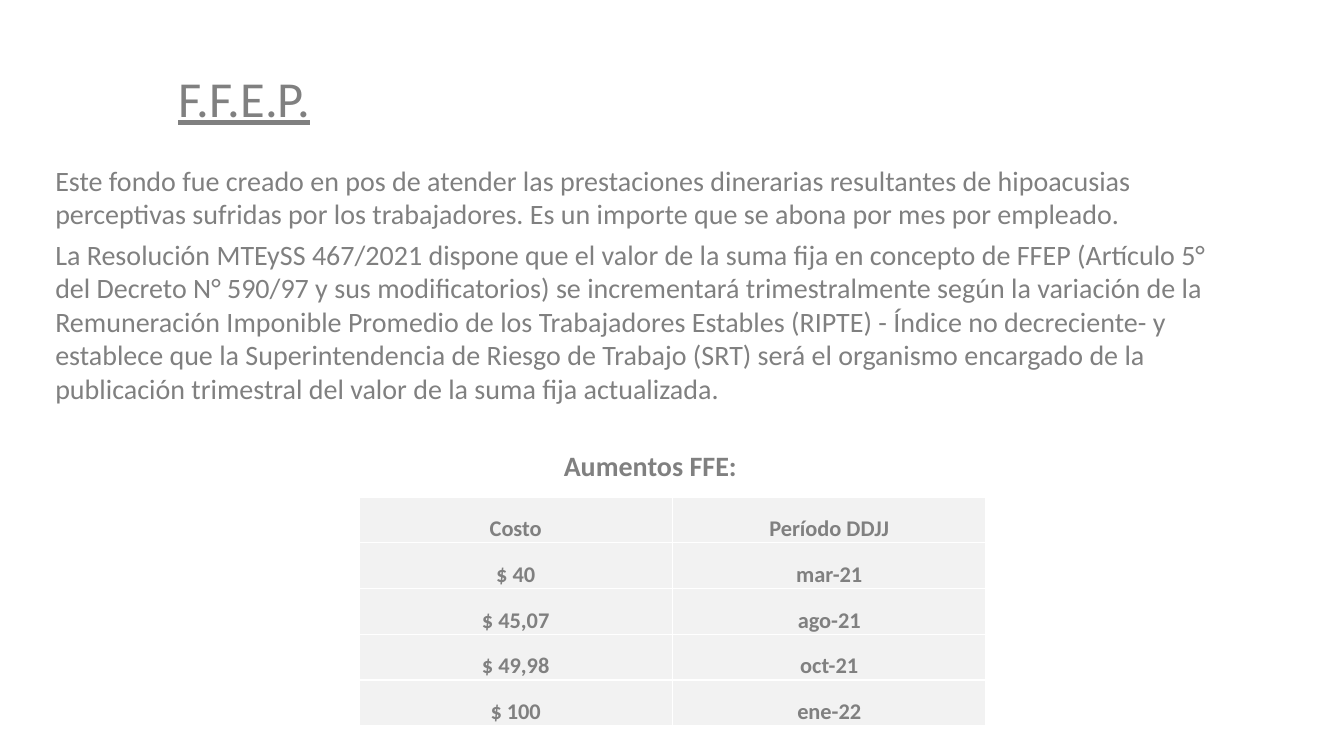
from lxml.etree import SubElement
from pptx import Presentation
from pptx.dml.color import RGBColor
from pptx.enum.text import MSO_ANCHOR as Anchor, PP_ALIGN as Align
from pptx.oxml.ns import qn
from pptx.util import Inches, Pt

TITLE = "F.F.E.P."
FUND_TEXT = [
    "Este fondo fue creado en pos de atender las prestaciones dinerarias resultantes de "
    "hipoacusias perceptivas sufridas por los trabajadores. Es un importe que se abona por "
    "mes por empleado.",
    "La Resolución MTEySS 467/2021 dispone que el valor de la suma fija en concepto de FFEP "
    "(Artículo 5° del Decreto N° 590/97 y sus modificatorios) se incrementará trimestralmente "
    "según la variación de la Remuneración Imponible Promedio de los Trabajadores Estables "
    "(RIPTE) - Índice no decreciente- y establece que la Superintendencia de Riesgo de Trabajo "
    "(SRT) será el organismo encargado de la publicación trimestral del valor de la suma fija "
    "actualizada.",
]
INCREASES_HEADING = "Aumentos FFE:"
INCREASES = [
    ("Costo", "Período DDJJ"),
    ("$ 40", "mar-21"),
    ("$ 45,07", "ago-21"),
    ("$ 49,98", "oct-21"),
    ("$ 100", "ene-22"),
]
GRAY, CELL_FILL, CELL_BORDER = "808080", "F2F2F2", "FFFFFF"


def color(hex_code):
    return RGBColor.from_string(hex_code)


def write(frame, texts, size=20, bold=False, underline=False, align=Align.LEFT, gap=0):
    for index, text in enumerate(texts):
        paragraph = frame.add_paragraph() if index else frame.paragraphs[0]
        paragraph.alignment = align
        if index:
            paragraph.space_before = Pt(gap)
        run = paragraph.add_run()
        run.text = text
        font = run.font
        font.name, font.size, font.bold, font.underline = "Calibri", Pt(size), bold, underline
        font.color.rgb = color(GRAY)


def text_area(slide, left, top, width, height, anchor=Anchor.TOP):
    box = slide.shapes.add_textbox(Inches(left), Inches(top), Inches(width), Inches(height))
    frame = box.text_frame
    frame.word_wrap = True
    frame.vertical_anchor = anchor
    return frame


def style_cell(cell):
    cell.vertical_anchor = Anchor.BOTTOM
    cell.margin_left = cell.margin_right = cell.margin_top = Inches(0.01)
    cell.margin_bottom = 0
    properties = cell._tc.get_or_add_tcPr()
    for side in ("a:lnL", "a:lnR", "a:lnT", "a:lnB"):
        line = SubElement(properties, qn(side), w=str(Pt(1)))
        SubElement(SubElement(line, qn("a:solidFill")), qn("a:srgbClr"), val=CELL_BORDER)
    cell.fill.solid()
    cell.fill.fore_color.rgb = color(CELL_FILL)


def main():
    deck = Presentation()
    deck.slide_width, deck.slide_height = Inches(13.33), Inches(7.5)
    slide = deck.slides.add_slide(deck.slide_layouts[6])

    write(text_area(slide, 1.67, 0.34, 11, 1.25, Anchor.MIDDLE), [TITLE], size=36, underline=True)
    write(text_area(slide, 0.45, 1.57, 12, 2.6), FUND_TEXT, gap=4.8)
    write(text_area(slide, 0.45, 4.4, 12, 0.45), [INCREASES_HEADING], bold=True, align=Align.CENTER)

    increases = slide.shapes.add_table(
        len(INCREASES), len(INCREASES[0]),
        Inches(3.56), Inches(4.93), Inches(6.22), Inches(2.27),
    ).table
    for row, values in enumerate(INCREASES):
        for column, value in enumerate(values):
            cell = increases.cell(row, column)
            style_cell(cell)
            write(cell.text_frame, [value], size=16, bold=True, align=Align.CENTER)

    deck.save("out.pptx")


if __name__ == "__main__":
    main()
